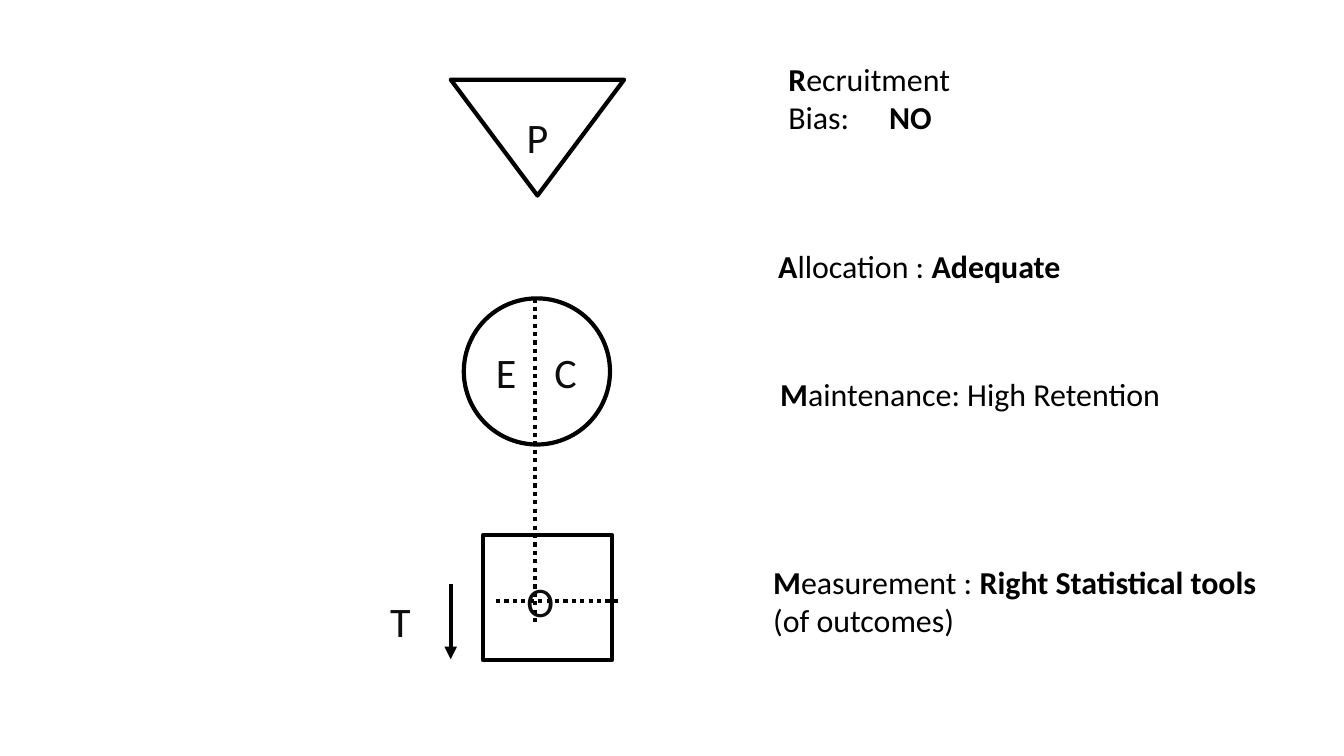
from pptx import Presentation, util as u
from pptx.dml.color import RGBColor
from pptx.enum import dml, shapes, text
from pptx.oxml.ns import qn
from lxml import etree

BLACK, SOFT_BLACK = "000000", "0D0D0D"


def color(hex_value):
    """Turn a hex string into a colour."""
    return RGBColor.from_string(hex_value)


def add_text(slide, left, top, width, height, paragraphs, size=22.8,
             fill=BLACK, align=text.PP_ALIGN.LEFT, wrap=True):
    """Add a text box; each paragraph is a list of (words, bold) runs."""
    frame = slide.shapes.add_textbox(*map(u.Inches, (left, top, width, height))).text_frame
    frame.word_wrap = wrap
    frame.margin_left = frame.margin_right = u.Inches(0.1)
    for index, runs in enumerate(paragraphs):
        paragraph = frame.add_paragraph() if index else frame.paragraphs[0]
        paragraph.alignment = align
        for words, bold in runs:
            run = paragraph.add_run()
            run.text = words
            run.font.name = "Calibri"
            run.font.size = u.Pt(size)
            run.font.bold = bold
            run.font.color.rgb = color(fill)


def add_outline(slide, kind, left, top, width, height, rotation=0):
    """Add an unfilled shape with a thick black line."""
    outline = slide.shapes.add_shape(kind, *map(u.Inches, (left, top, width, height)))
    outline.rotation = rotation
    outline.shadow.inherit = False
    outline.fill.background()
    outline.line.color.rgb = color(BLACK)
    outline.line.width = u.Pt(3)


def add_line(slide, x1, y1, x2, y2, dotted=False, arrow=False):
    """Add a straight black line, dotted or with an arrowhead on request."""
    line = slide.shapes.add_connector(
        shapes.MSO_CONNECTOR.STRAIGHT, *map(u.Inches, (x1, y1, x2, y2)))
    line.line.color.rgb = color(BLACK)
    line.line.width = u.Pt(3)
    if dotted:
        line.line.dash_style = dml.MSO_LINE.ROUND_DOT
    if arrow:
        etree.SubElement(line.line._get_or_add_ln(), qn("a:tailEnd"), type="triangle")
    etree.SubElement(line._element.spPr, qn("a:effectLst"))


def add_study_diagram(slide, left, top):
    """Draw the population, comparison, outcome and time symbols."""
    kinds = shapes.MSO_SHAPE
    add_outline(slide, kinds.OVAL, left + 0.83, top + 2.17, 1.45, 1.45)
    add_outline(slide, kinds.RECTANGLE, left + 1.02, top + 4.52, 1.28, 1.24)
    add_line(slide, left + 1.54, top + 2.17, left + 1.54, top + 5.4, dotted=True)
    add_outline(slide, kinds.ISOSCELES_TRIANGLE, left + 0.7, top, 1.72, 1.15, rotation=180)
    add_line(slide, left + 1.15, top + 5.17, left + 2.39, top + 5.17, dotted=True)
    add_line(slide, left + 0.7, top + 5, left + 0.7, top + 5.75, arrow=True)
    letters = (("P", 1.56, 0.27), ("E", 1.25, 2.6), ("C", 1.84, 2.6),
               ("O", 1.59, 4.87), ("T", 0.2, 5.07))
    for letter, center, offset in letters:
        add_text(slide, left + center - 0.25, top + offset, 0.5, 0.6,
                 [[(letter, False)]], size=30, fill=SOFT_BLACK,
                 align=text.PP_ALIGN.CENTER)


def add_appraisal(slide, left, top):
    """Write the four bias checks beside the diagram."""
    checks = (
        (0.15, 0, 3.45, 0.86, [[("R", True), ("ecruitment", False)],
                               [("Bias: \t", False), ("NO", True)]]),
        (0.05, 1.86, 3.64, 0.48, [[("A", True), ("llocation : ", False),
                                   ("Adequate", True)]]),
        (0.07, 3.13, 4, 0.48, [[("M", True), ("aintenance: High Retention", False)]]),
        (0, 4.99, 5.01, 0.86, [[("M", True), ("easurement : ", False),
                                ("Right Statistical tools ", True),
                                ("(of outcomes)", False)]]),
    )
    for indent, offset, width, height, paragraphs in checks:
        add_text(slide, left + indent, top + offset, width, height, paragraphs)


def main():
    """Build and save the slide."""
    deck = Presentation()
    deck.slide_width, deck.slide_height = u.Inches(13.33), u.Inches(7.5)
    slide = deck.slides.add_slide(deck.slide_layouts[6])
    add_study_diagram(slide, 3.77, 0.79)
    add_appraisal(slide, 7.57, 0.54)
    deck.save("out.pptx")


if __name__ == "__main__":
    main()
